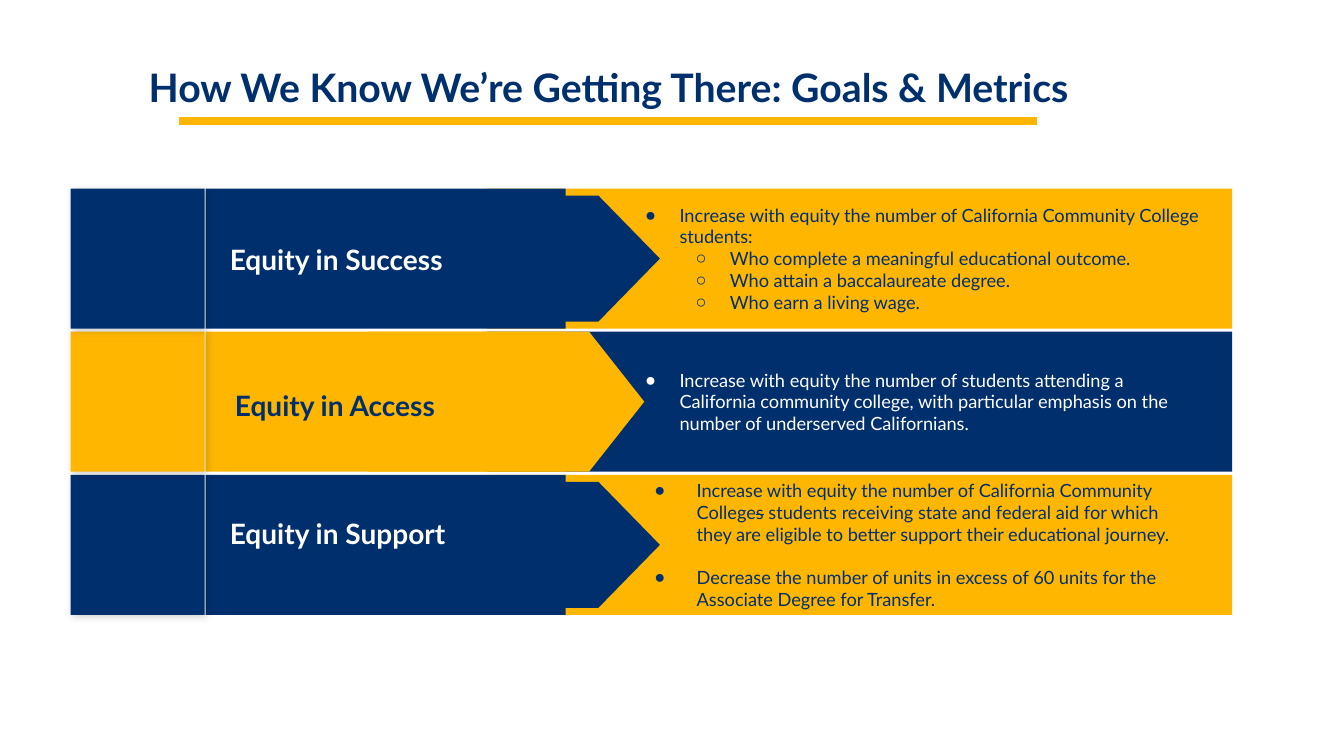
from lxml.etree import SubElement
from pptx import Presentation
from pptx.dml.color import RGBColor
from pptx.enum.shapes import MSO_CONNECTOR, MSO_SHAPE
from pptx.enum.text import MSO_ANCHOR, MSO_AUTO_SIZE, PP_ALIGN
from pptx.oxml.ns import qn
from pptx.util import Inches, Pt

NAVY = RGBColor(0x00, 0x2F, 0x6D)
GOLD = RGBColor(0xFF, 0xB6, 0x00)
WHITE = RGBColor(0xFF, 0xFF, 0xFF)

ROW_TOP, ROW_STEP, ROW_HEIGHT = 1.87, 1.42, 1.39
ARROW_CENTER = 5.02
LIST_INSET = 0.13


class GoalSlide:
    """Holds the text style and the slide being filled."""

    def __init__(self, slide, font_name="Lato"):
        self.slide = slide
        self.font_name = font_name

    def style(self, font, size, color, bold=False):
        font.name, font.size, font.bold = self.font_name, Pt(size), bold
        font.color.rgb = color

    def place(self, shape, left, top, width, height):
        shape.left, shape.top = Inches(left), Inches(top)
        shape.width, shape.height = Inches(width), Inches(height)

    def frame(self, shape, anchor, inset_x, inset_y):
        frame = shape.text_frame
        frame.word_wrap = True
        frame.auto_size = MSO_AUTO_SIZE.NONE
        frame.vertical_anchor = anchor
        frame.margin_left = frame.margin_right = Inches(inset_x)
        frame.margin_top = frame.margin_bottom = Inches(inset_y)
        return frame

    def title(self, text):
        title = self.slide.shapes.title
        self.place(title, 0.7, 0, 10.67, 1.15)
        frame = self.frame(title, MSO_ANCHOR.BOTTOM, 0.1, 0.05)
        frame.text = text
        para = frame.paragraphs[0]
        para.alignment = PP_ALIGN.CENTER
        para.line_spacing = 0.9
        self.style(para.runs[0].font, 28, NAVY, bold=True)

    def rule(self, left, right, top):
        line = self.slide.shapes.add_connector(
            MSO_CONNECTOR.STRAIGHT, Inches(left), Inches(top), Inches(right), Inches(top))
        line.line.color.rgb = GOLD
        line.line.width = Pt(5.75)
        SubElement(line._element.spPr, qn("a:effectLst"))

    def block(self, kind, left, top, width, height, color):
        block = self.slide.shapes.add_shape(
            kind, Inches(left), Inches(top), Inches(width), Inches(height))
        block.shadow.inherit = False
        block.fill.solid()
        block.fill.fore_color.rgb = color
        block.line.fill.background()
        return block

    def cast_shadow(self, block):
        effects = block._element.spPr.find(qn("a:effectLst"))
        shadow = SubElement(effects, qn("a:outerShdw"), blurRad=str(Pt(5.6)),
                            dist=str(Pt(2.2)), dir="2700000", rotWithShape="0")
        color = SubElement(shadow, qn("a:srgbClr"), val="000000")
        SubElement(color, qn("a:alpha"), val="17000")

    def label(self, text, left, top, color):
        box = self.slide.shapes.add_textbox(
            Inches(left), Inches(top), Inches(3.75), Inches(1.07))
        frame = self.frame(box, MSO_ANCHOR.MIDDLE, LIST_INSET, LIST_INSET)
        frame.text = text
        self.style(frame.paragraphs[0].runs[0].font, 20, color, bold=True)

    def bullet_list(self, holder, top, width, items, color, gap):
        # Bring the list in front of the row's blocks
        self.slide.shapes._spTree.append(holder._element)
        self.place(holder, 6.11, top, width, ROW_HEIGHT)
        frame = self.frame(holder, MSO_ANCHOR.MIDDLE, LIST_INSET, LIST_INSET)
        for index, (level, margin, hanging, pieces) in enumerate(items):
            para = frame.paragraphs[0] if index == 0 else frame.add_paragraph()
            para.level = level
            properties = para._p.get_or_add_pPr()
            properties.set("marL", str(Inches(margin)))
            properties.set("indent", str(-Inches(hanging)))
            SubElement(properties, qn("a:buChar"), char="○" if level else "●")
            para.alignment = PP_ALIGN.LEFT
            para.line_spacing = 1.0
            para.space_before = Pt(gap if index else 0)
            para.space_after = Pt(0)
            # Every second piece is struck through
            for number, piece in enumerate(pieces):
                span = para.add_run()
                span.text = piece
                self.style(span.font, 13, color)
                if number % 2:
                    span.font._element.set("strike", "sngStrike")

    def row(self, index, goal, holder):
        top = ROW_TOP + index * ROW_STEP
        main, accent = goal["colors"]
        self.block(MSO_SHAPE.RECTANGLE, 4.83, top, 7.39, ROW_HEIGHT, accent)
        self.block(MSO_SHAPE.RECTANGLE, 2.04, top, 3.57, ROW_HEIGHT, main)
        breadth, length = goal["arrow"]
        arrow = self.block(
            MSO_SHAPE.FLOWCHART_OFFPAGE_CONNECTOR, ARROW_CENTER - breadth / 2,
            top + (ROW_HEIGHT - length) / 2, breadth, length, main)
        arrow.rotation = 270
        label_left, label_top = goal["label_at"]
        self.label(goal["name"], label_left, label_top, goal["label_color"])
        self.cast_shadow(self.block(MSO_SHAPE.RECTANGLE, 0.7, top, 1.33, ROW_HEIGHT, main))
        self.bullet_list(holder, top, goal["list_width"], goal["items"],
                         goal["list_color"], goal.get("gap", 0))


GOALS = [
    dict(name="Equity in Success", colors=(NAVY, GOLD), arrow=(1.25, 3.05),
         label_at=(2.15, 2.04), label_color=WHITE, list_width=6.01, list_color=NAVY,
         items=[
             (0, 0.5, 0.34, ["Increase with equity the number of California Community "
                             "College students:"]),
             (1, 1, 0.34, ["Who complete a meaningful educational outcome."]),
             (1, 1, 0.34, ["Who attain a baccalaureate degree."]),
             (1, 1, 0.34, ["Who earn a living wage."]),
         ]),
    dict(name="Equity in Access", colors=(GOLD, NAVY), arrow=(1.39, 2.74),
         label_at=(2.2, 3.49), label_color=NAVY, list_width=5.74, list_color=WHITE,
         items=[
             (0, 0.5, 0.34, ["Increase with equity the number of students attending a "
                             "California community college, with particular emphasis on "
                             "the number of underserved Californians."]),
         ]),
    dict(name="Equity in Support", colors=(NAVY, GOLD), arrow=(1.25, 3.05),
         label_at=(2.15, 4.76), label_color=WHITE, list_width=5.74, list_color=NAVY,
         gap=15.6,
         items=[
             (0, 0.67, 0.42, ["Increase with equity the number of California Community "
                              "College", "s", " students receiving state and federal aid "
                              "for which they are eligible to better support their "
                              "educational journey."]),
             (0, 0.67, 0.42, ["Decrease the number of units in excess of 60 units for the "
                              "Associate Degree for Transfer."]),
         ]),
]


def main():
    deck = Presentation()
    deck.slide_width, deck.slide_height = Inches(13.33), Inches(7.5)
    # The comparison layout offers a title and four bodies; three are needed
    slide = deck.slides.add_slide(deck.slide_layouts[4])
    *holders, spare = list(slide.placeholders)[1:]
    spare._element.getparent().remove(spare._element)

    # Heading
    page = GoalSlide(slide)
    page.title("How We Know We’re Getting There: Goals & Metrics")
    page.rule(1.78, 10.29, 1.2)

    # Goal rows, lowest first so that upper rows lie in front
    for index, goal in reversed(list(enumerate(GOALS))):
        page.row(index, goal, holders[index])

    deck.save("out.pptx")


if __name__ == "__main__":
    main()
